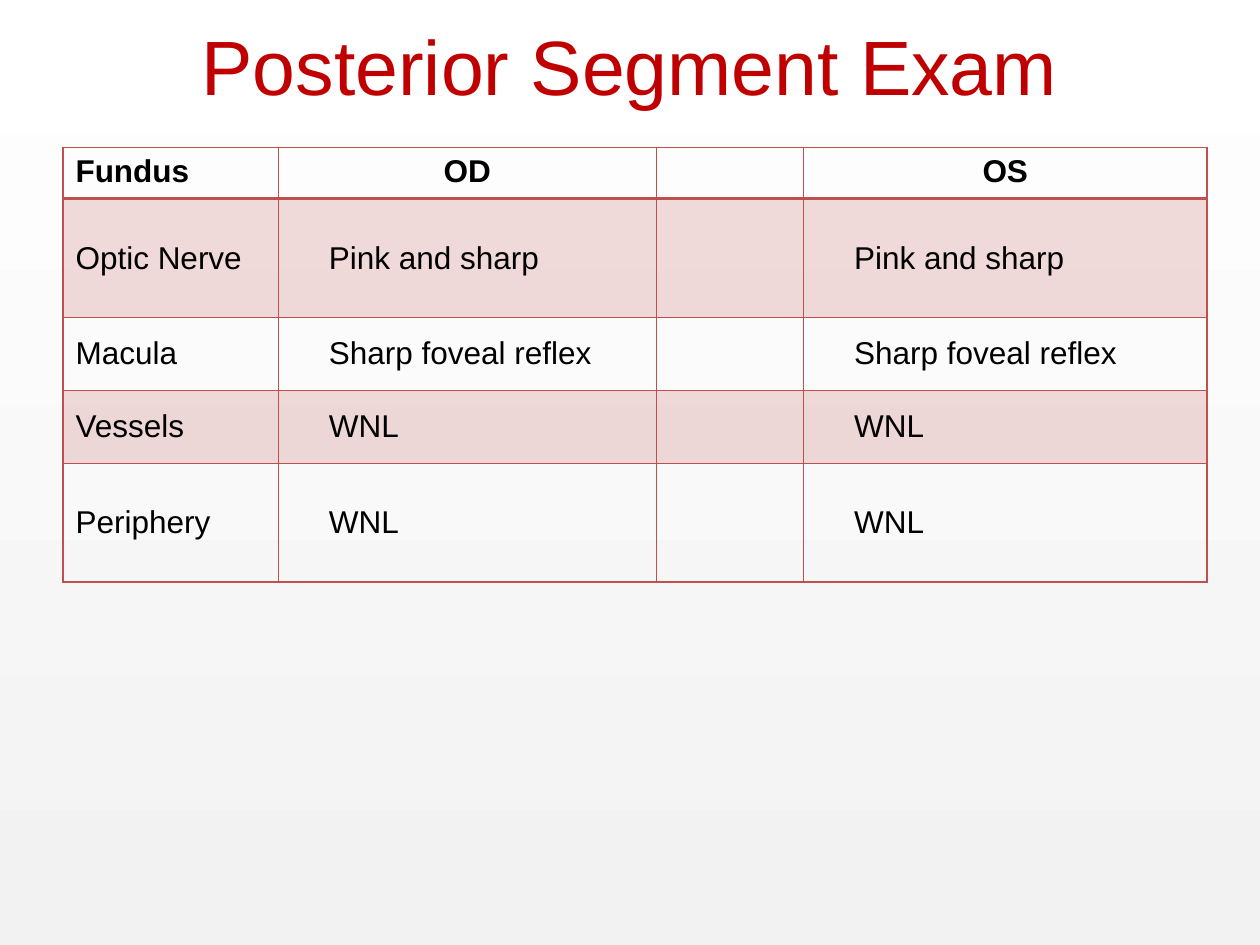
from lxml.etree import SubElement
from pptx import Presentation
from pptx.dml.color import RGBColor
from pptx.enum.text import MSO_ANCHOR as Anchor, PP_ALIGN as Align
from pptx.oxml.ns import qn
from pptx.util import Cm, Pt

FONT = "Arial"
RED = "C0504D"
COLUMN_WIDTHS = [4.34, 7.62, 2.97, 8.13]
ROW_HEIGHTS = [1.04, 2.39, 1.47, 1.47, 2.39]
FINDINGS = [
    ["Fundus", "OD", "", "OS"],
    ["Optic Nerve", "Pink and sharp", "", "Pink and sharp"],
    ["Macula", "Sharp foveal reflex", "", "Sharp foveal reflex"],
    ["Vessels", "WNL", "", "WNL"],
    ["Periphery", "WNL", "", "WNL"],
]


def color(hex_value):
    return RGBColor.from_string(hex_value)


def style_text(paragraph, size, hex_value, align=Align.LEFT, bold=False):
    paragraph.alignment = align
    font = paragraph.font
    for run in paragraph.runs:
        font = run.font
        font.name, font.size, font.bold = FONT, Pt(size), bold
        font.color.rgb = color(hex_value)


def set_background(slide):
    fill = slide.background.fill
    fill.gradient()
    fill.gradient_angle = 90
    for stop, hex_value in zip(fill.gradient_stops, ["F2F2F2", "FFFFFF"]):
        stop.color.rgb = color(hex_value)


def add_title(slide, text):
    title = slide.shapes.title
    title.left, title.top = Cm(1.27), Cm(-0.28)
    title.width, title.height = Cm(22.86), Cm(3.18)
    title.text_frame.text = text
    title.text_frame.vertical_anchor = Anchor.MIDDLE
    style_text(title.text_frame.paragraphs[0], 44, "C00000", Align.CENTER)


def set_borders(cell, widths):
    """Draw red borders; widths maps each side (L, R, T, B) to points."""
    properties = cell._tc.get_or_add_tcPr()
    for side, width in widths.items():
        line = SubElement(properties, qn(f"a:ln{side}"), w=str(Pt(width)))
        fill = SubElement(line, qn("a:solidFill"))
        SubElement(fill, qn("a:srgbClr"), val=RED)


def set_tint(cell, percent):
    cell.fill.solid()
    cell.fill.fore_color.rgb = color(RED)
    tint = cell._tc.tcPr.find(f"{qn('a:solidFill')}/{qn('a:srgbClr')}")
    SubElement(tint, qn("a:alpha"), val=str(percent * 1000))


def fill_cell(cell, text, row, column):
    is_header = row == 0
    cell.text_frame.text = text
    centred = is_header and column > 0
    style_text(cell.text_frame.paragraphs[0], 18, "000000",
               Align.CENTER if centred else Align.LEFT, is_header)
    cell.vertical_anchor = Anchor.TOP if is_header else Anchor.MIDDLE
    if not is_header and column in (1, 3):
        cell.margin_left = Cm(1.02)
    set_borders(cell, {"L": 1, "R": 1, "T": 2 if row == 1 else 1,
                       "B": 2 if is_header else 1})
    if row % 2:
        set_tint(cell, 20)
    else:
        cell.fill.background()


def add_findings_table(slide):
    frame = slide.shapes.add_table(
        len(ROW_HEIGHTS), len(COLUMN_WIDTHS), Cm(1.27), Cm(2.97),
        Cm(sum(COLUMN_WIDTHS)), Cm(sum(ROW_HEIGHTS)))
    table = frame.table
    table.first_row = table.horz_banding = False
    for column, width in zip(table.columns, COLUMN_WIDTHS):
        column.width = Cm(width)
    for row, height in zip(table.rows, ROW_HEIGHTS):
        row.height = Cm(height)
    for row, texts in enumerate(FINDINGS):
        for column, text in enumerate(texts):
            fill_cell(table.cell(row, column), text, row, column)


def main():
    presentation = Presentation()
    presentation.slide_width, presentation.slide_height = Cm(25.4), Cm(19.05)
    slide = presentation.slides.add_slide(presentation.slide_layouts[5])
    set_background(slide)
    add_title(slide, "Posterior Segment Exam")
    add_findings_table(slide)
    presentation.save("out.pptx")


if __name__ == "__main__":
    main()
